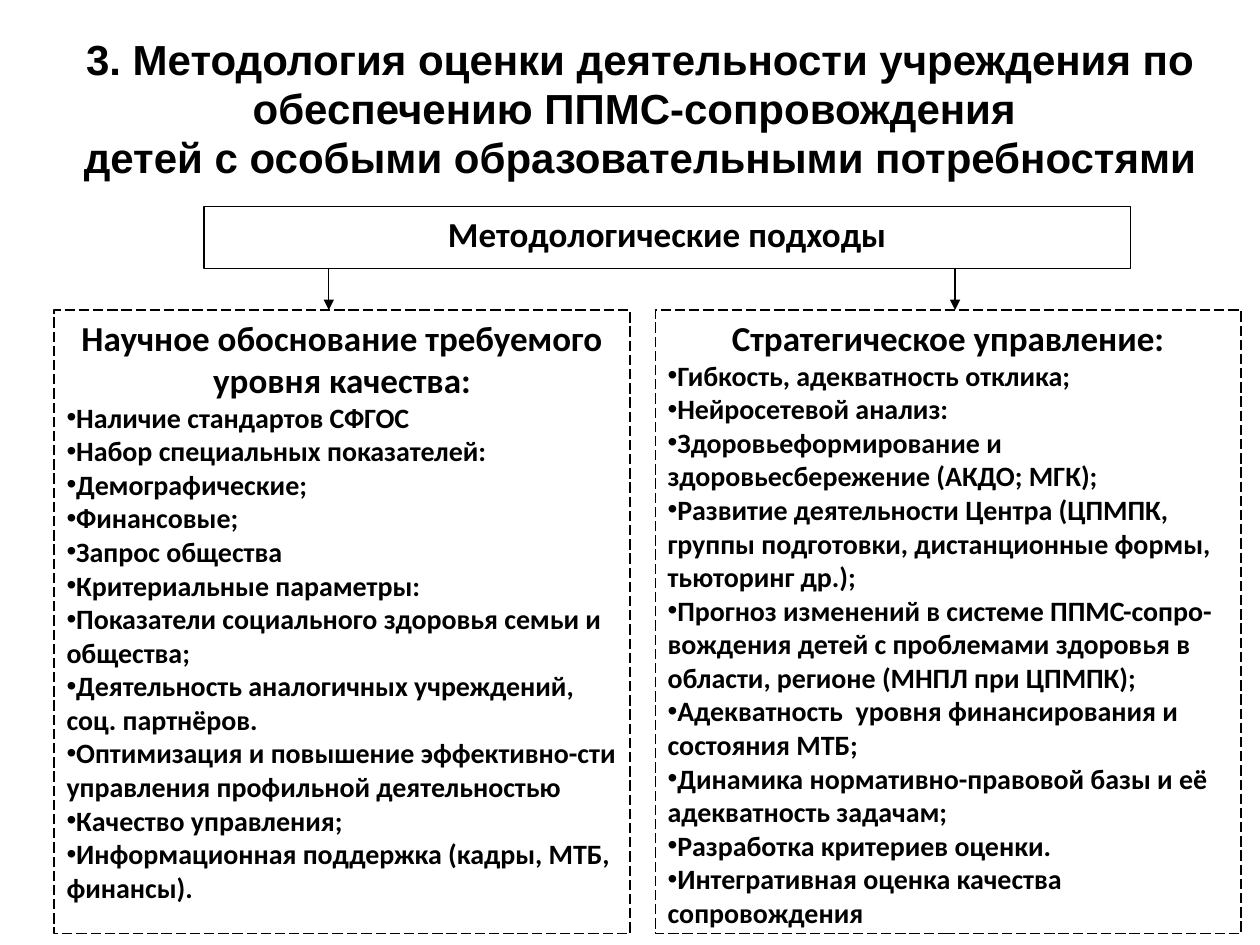
import pptx
import pptx.util
import pptx.dml.color
import pptx.enum.dml
import pptx.enum.shapes
import pptx.enum.text
import pptx.oxml
import pptx.oxml.ns
from pptx.util import Inches

COLORS = {"ink": "000000", "paper": "FFFFFF"}
CENTER = pptx.enum.text.PP_ALIGN.CENTER
LEFT = pptx.enum.text.PP_ALIGN.LEFT
TOP = pptx.enum.text.MSO_ANCHOR.TOP
INK = pptx.dml.color.RGBColor.from_string(COLORS["ink"])
PAPER = pptx.dml.color.RGBColor.from_string(COLORS["paper"])


def write_paragraphs(frame, lines, font_name):
    """Fill a text frame from (text, size, alignment, bulleted) tuples."""
    frame.word_wrap = True
    frame.vertical_anchor = TOP
    for index, (text, size, alignment, bulleted) in enumerate(lines):
        paragraph = frame.paragraphs[0] if index == 0 else frame.add_paragraph()
        paragraph.alignment = alignment
        run = paragraph.add_run()
        run.text = text
        font_format = {"name": font_name, "size": pptx.util.Pt(size), "bold": True}
        for name, value in font_format.items():
            setattr(run.font, name, value)
        run.font.color.rgb = INK
        if bulleted:
            properties = paragraph._p.get_or_add_pPr()
            properties.set("marL", "0")
            properties.set("indent", "0")
            for tag, attribute, value in (("a:buFont", "typeface", "Arial"), ("a:buChar", "char", "•")):
                element = pptx.oxml.parse_xml(f"<{tag} {pptx.oxml.ns.nsdecls('a')}/>")
                element.set(attribute, value)
                properties.append(element)


def add_box(slide, left, top, width, height, lines, dash=None):
    """Add a white outlined rectangle holding the given lines."""
    shape = slide.shapes.add_shape(
        pptx.enum.shapes.MSO_SHAPE.RECTANGLE,
        Inches(left), Inches(top), Inches(width), Inches(height))
    shape.shadow.inherit = False
    shape.fill.solid()
    shape.fill.fore_color.rgb = PAPER
    shape.line.color.rgb = INK
    shape.line.width = pptx.util.Pt(0.75)
    if dash:
        shape.line.dash_style = dash
    write_paragraphs(shape.text_frame, lines, "Calibri")


presentation = pptx.Presentation()
presentation.slide_width = Inches(10)
presentation.slide_height = Inches(7.5)
slide = presentation.slides.add_slide(presentation.slide_layouts[5])

# Title
title = slide.shapes.title
title_place = {"left": 0.47, "top": 0.23, "width": 9.22, "height": 1.28}
for name, value in title_place.items():
    setattr(title, name, Inches(value))
title.text_frame.auto_size = pptx.enum.text.MSO_AUTO_SIZE.NONE
write_paragraphs(title.text_frame, [
    ("3. Методология оценки деятельности учреждения по обеспечению ППМС-сопровождения ", 24, CENTER, False),
    ("детей с особыми образовательными потребностями", 24, CENTER, False),
], "Arial")
for paragraph in title.text_frame.paragraphs:
    paragraph.line_spacing = pptx.util.Pt(28)

# Heading box and the two approaches below it
heading_top, heading_height, column_top = 1.64, 0.49, 2.46
add_box(slide, 1.62, heading_top, 7.35, heading_height,
        [("Методологические подходы", 20, CENTER, False)])

columns = [
    (0.43, 4.57, "Научное обоснование требуемого уровня качества:", [
        "Наличие стандартов СФГОС",
        "Набор специальных показателей:",
        "Демографические;",
        "Финансовые;",
        "Запрос общества",
        "Критериальные параметры:",
        "Показатели социального здоровья семьи и общества;",
        "Деятельность аналогичных учреждений, соц. партнёров.",
        "Оптимизация и повышение эффективно-сти управления профильной деятельностью",
        "Качество управления;",
        "Информационная поддержка (кадры, МТБ, финансы).",
    ]),
    (5.2, 4.65, "Стратегическое управление:", [
        "Гибкость, адекватность отклика;",
        "Нейросетевой анализ:",
        "Здоровьеформирование и здоровьесбережение (АКДО; МГК);",
        "Развитие деятельности Центра (ЦПМПК, группы подготовки, дистанционные формы, тьюторинг др.);",
        "Прогноз изменений в системе ППМС-сопро-вождения детей с проблемами здоровья в области, "
        "регионе (МНПЛ при ЦПМПК);",
        "Адекватность  уровня финансирования и состояния МТБ;",
        "Динамика нормативно-правовой базы и её  адекватность задачам;",
        "Разработка критериев оценки.",
        "Интегративная оценка качества сопровождения",
    ]),
]
for left, width, heading, items in columns:
    lines = [(heading, 20, CENTER, False)] + [(item, 16, LEFT, True) for item in items]
    add_box(slide, left, column_top, width, 4.95, lines, pptx.enum.dml.MSO_LINE.LONG_DASH)

# Arrows from the heading down to each column
for x in (2.61, 7.58):
    arrow = slide.shapes.add_connector(
        pptx.enum.shapes.MSO_CONNECTOR.STRAIGHT,
        Inches(x), Inches(heading_top + heading_height), Inches(x), Inches(column_top))
    arrow.line.color.rgb = INK
    arrow.line.width = pptx.util.Pt(0.75)
    namespace = pptx.oxml.ns.nsdecls("a")
    arrow.line._get_or_add_ln().append(
        pptx.oxml.parse_xml(f'<a:tailEnd {namespace} type="triangle"/>'))
    arrow._element.spPr.append(pptx.oxml.parse_xml(f"<a:effectLst {namespace}/>"))

presentation.save("out.pptx")
